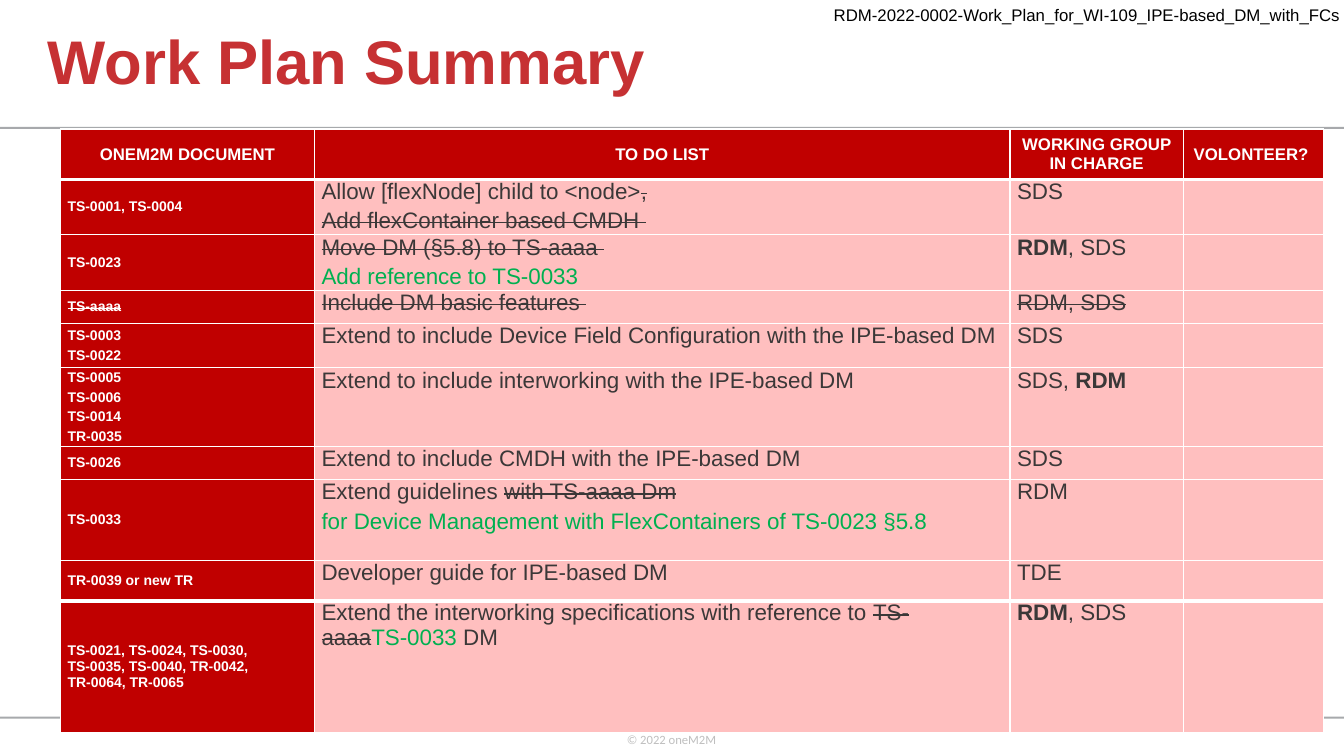
import pptx
import pptx.util
import pptx.dml.color
import pptx.enum.shapes
import pptx.enum.text
import pptx.oxml.ns
import lxml.etree

COLORS = {"title": "C63133", "dark_red": "C00000", "pink": "FFBFBF", "white": "FFFFFF",
          "text": "3B3838", "green": "00B050", "rule": "A7A9AC", "footer": "BFBFBF",
          "black": "000000"}
SLIDE_WIDTH = pptx.util.Inches(13.33)
SLIDE_HEIGHT = pptx.util.Inches(7.5)
ALIGN = pptx.enum.text.PP_ALIGN
ANCHOR = pptx.enum.text.MSO_ANCHOR

MARKS = {"bold": {"bold": True}, "struck": {"strike": True}, "new": {"color": "green"}}
COLUMN_SHARES = [18.9, 51.75, 12.9, 10.43]
ROW_SHARES = [6.67, 7.33, 7.33, 4.4, 5.87, 10.4, 4.4, 10.67, 5.33, 17.47]
HEADINGS = ["ONEM2M DOCUMENT", "TO DO LIST", "WORKING GROUP IN CHARGE", "VOLONTEER? "]
RDM_FIRST = [[("RDM", "bold"), ", SDS"]]
WORK_ITEMS = [
    (["TS-0001, TS-0004"],
     [["Allow [flexNode] child to <node>", (",", "struck")],
      [("Add flexContainer based CMDH ", "struck")]],
     ["SDS"]),
    (["TS-0023"],
     [[("Move DM (§5.8) to TS-aaaa ", "struck")], [("Add reference to TS-0033", "new")]],
     RDM_FIRST),
    ([[("TS-aaaa", "struck")]], [[("Include DM basic features ", "struck")]],
     [[("RDM, SDS", "struck")]]),
    (["TS-0003", "TS-0022"],
     ["Extend to include Device Field Configuration with the IPE-based DM"], ["SDS"]),
    (["TS-0005", "TS-0006", "TS-0014", "TR-0035"],
     ["Extend to include interworking with the IPE-based DM"], [["SDS, ", ("RDM", "bold")]]),
    (["TS-0026"], ["Extend to include CMDH with the IPE-based DM"], ["SDS"]),
    (["TS-0033"],
     [["Extend guidelines ", ("with TS-aaaa Dm", "struck")],
      [("for Device Management with FlexContainers of TS-0023 §5.8", "new")]],
     ["RDM"]),
    (["TR-0039 or new TR"], ["Developer guide for IPE-based DM"], ["TDE"]),
    (["TS-0021, TS-0024, TS-0030, TS-0035, TS-0040, TR-0042, TR-0064, TR-0065"],
     [["Extend the interworking specifications with reference to ", ("TS-aaaa", "struck"),
       ("TS-0033", "new"), " DM"]],
     RDM_FIRST),
]


def across(share):
    return round(SLIDE_WIDTH * share / 100)


def down(share):
    return round(SLIDE_HEIGHT * share / 100)


def area(left, top, width, height):
    return across(left), down(top), across(width), down(height)


def rgb(name):
    return pptx.dml.color.RGBColor.from_string(COLORS[name])


def add_span(para, text, size=16, color="text", bold=False, font="Arial", strike=False):
    span = para.add_run()
    span.text = text
    span.font.size = pptx.util.Pt(size)
    span.font.name = font
    span.font.bold = bold
    span.font.color.rgb = rgb(color)
    if strike:
        span._r.get_or_add_rPr().set("strike", "sngStrike")


def add_rule(page, top):
    rule = page.shapes.add_shape(pptx.enum.shapes.MSO_SHAPE.RECTANGLE, *area(0, top, 100, 0.27))
    rule.shadow.inherit = False
    rule.fill.solid()
    rule.fill.fore_color.rgb = rgb("rule")
    rule.line.fill.background()


def add_label(page, text, place, anchor=ANCHOR.TOP, wrap=True, **style):
    box = page.shapes.add_textbox(*area(*place))
    box.text_frame.word_wrap = wrap
    box.text_frame.vertical_anchor = anchor
    add_span(box.text_frame.paragraphs[0], text, **style)


def format_title(page, text):
    title = page.shapes.title
    title.left, title.top, title.width, title.height = area(2.78, 0, 64.44, 17.07)
    frame = title.text_frame
    frame.auto_size = pptx.enum.text.MSO_AUTO_SIZE.NONE
    frame.vertical_anchor = ANCHOR.MIDDLE
    para = frame.paragraphs[0]
    para.alignment = ALIGN.LEFT
    para.line_spacing = 0.9
    add_span(para, text, size=44, color="title", bold=True)


def add_border(cell, side, points):
    properties = cell._tc.get_or_add_tcPr()
    line = lxml.etree.SubElement(properties, pptx.oxml.ns.qn("a:ln" + side),
                                 w=str(pptx.util.Pt(points)))
    fill = lxml.etree.SubElement(line, pptx.oxml.ns.qn("a:solidFill"))
    lxml.etree.SubElement(fill, pptx.oxml.ns.qn("a:srgbClr"), val=COLORS["white"])


def fill_cell(cell, paragraphs, fill, borders, anchor=ANCHOR.TOP, align=ALIGN.LEFT, **style):
    for side, points in borders.items():
        add_border(cell, side, points)
    cell.fill.solid()
    cell.fill.fore_color.rgb = rgb(fill)
    cell.margin_left = cell.margin_right = pptx.util.Inches(0.07)
    cell.margin_top = cell.margin_bottom = 0
    cell.vertical_anchor = anchor
    for index, content in enumerate(paragraphs):
        frame = cell.text_frame
        para = frame.add_paragraph() if index else frame.paragraphs[0]
        para.alignment = align
        para.space_after = pptx.util.Pt(3 if index < len(paragraphs) - 1 else 0)
        for part in [content] if isinstance(content, str) else content:
            text, mark = (part, None) if isinstance(part, str) else part
            add_span(para, text, **{**style, **MARKS.get(mark, {})})


def add_work_plan(page):
    place = area(4.5, 17.07, sum(COLUMN_SHARES), sum(ROW_SHARES))
    table = page.shapes.add_table(len(ROW_SHARES), len(COLUMN_SHARES), *place).table
    table.horz_banding = False
    for column, share in zip(table.columns, COLUMN_SHARES):
        column.width = across(share)
    for row, share in zip(table.rows, ROW_SHARES):
        row.height = down(share)
    label = {"fill": "dark_red", "anchor": ANCHOR.MIDDLE, "color": "white", "bold": True}
    rows = [[[heading] for heading in HEADINGS]] + [[*item, []] for item in WORK_ITEMS]
    last = len(rows) - 1
    for r, contents in enumerate(rows):
        borders = {"L": 1, "R": 1, "T": 3 if r in (1, last) else 1,
                   "B": 3 if r in (0, last - 1) else 1}
        for c, content in enumerate(contents):
            if r == 0:
                style = {**label, "size": 12, "align": ALIGN.CENTER}
            elif c == 0:
                style = {**label, "size": 10}
            else:
                style = {"fill": "pink"}
            fill_cell(table.cell(r, c), content, borders=borders, **style)


def main():
    deck = pptx.Presentation()
    deck.slide_width = SLIDE_WIDTH
    deck.slide_height = SLIDE_HEIGHT
    page = deck.slides.add_slide(deck.slide_layouts[5])
    for top in (16.8, 94.8):
        add_rule(page, top)
    format_title(page, "Work Plan Summary")
    add_work_plan(page)
    add_label(page, "© 2022 oneM2M", (45.91, 96.13, 8.4, 5.33), wrap=False,
              size=9, font="Calibri", color="footer")
    add_label(page, "RDM-2022-0002-Work_Plan_for_WI-109_IPE-based_DM_with_FCs",
              (61.29, -0.67, 39.38, 5.33), anchor=ANCHOR.MIDDLE, size=12, color="black")
    deck.save("out.pptx")


if __name__ == "__main__":
    main()
